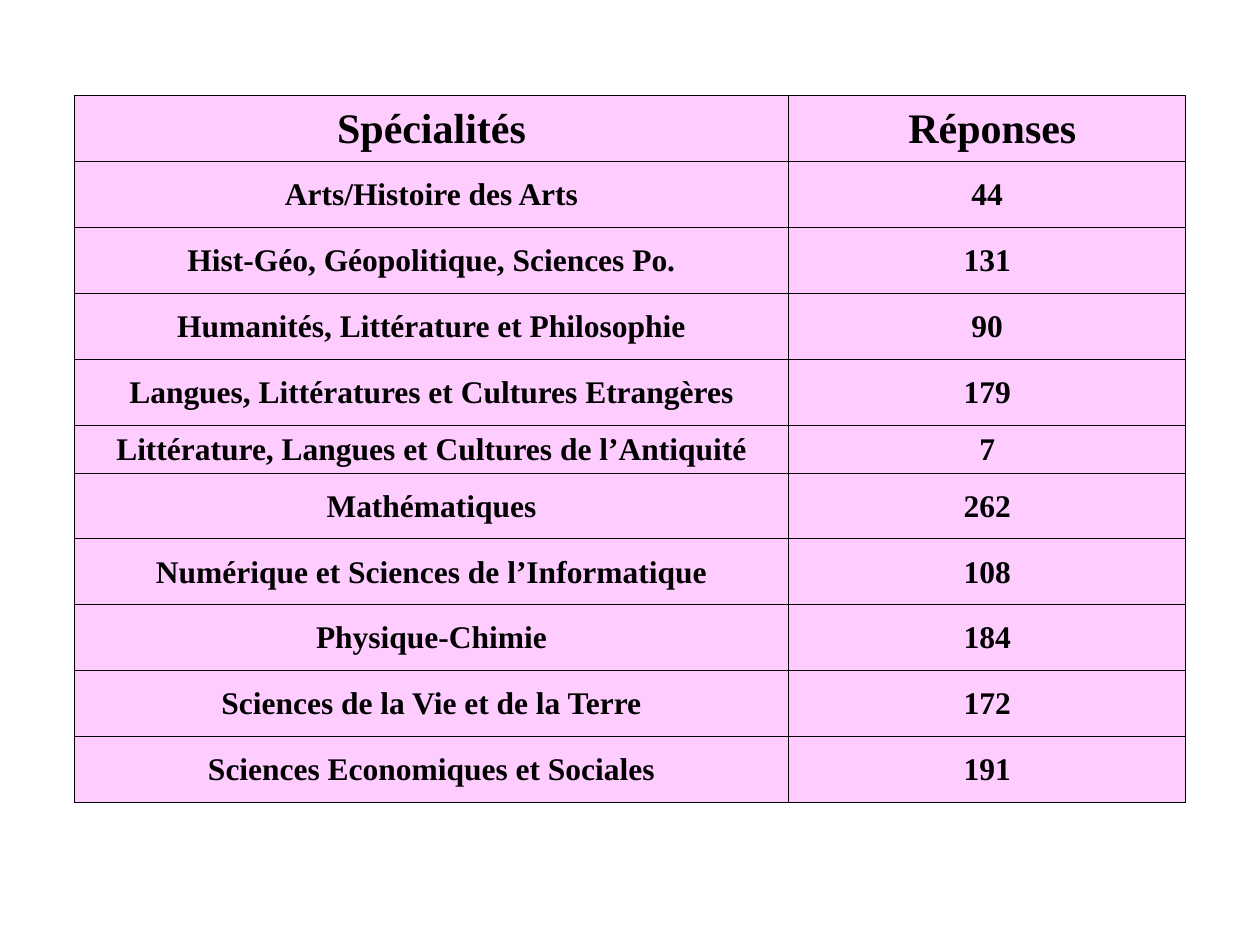
from lxml.etree import SubElement
from pptx import Presentation
from pptx.dml.color import RGBColor
from pptx.enum.text import MSO_ANCHOR, PP_ALIGN
from pptx.oxml.ns import qn
from pptx.util import Inches, Pt

PINK = RGBColor(0xFF, 0xCC, 0xFF)
BLACK = RGBColor(0, 0, 0)

HEADER = ("Spécialités", " Réponses")
ANSWERS = [
    ("Arts/Histoire des Arts", 44),
    ("Hist-Géo, Géopolitique, Sciences Po.", 131),
    ("Humanités, Littérature et Philosophie", 90),
    ("Langues, Littératures et Cultures Etrangères", 179),
    ("Littérature, Langues et Cultures de l’Antiquité", 7),
    ("Mathématiques", 262),
    ("Numérique et Sciences de l’Informatique", 108),
    ("Physique-Chimie", 184),
    ("Sciences de la Vie et de la Terre", 172),
    ("Sciences Economiques et Sociales", 191),
]
ROWS = [HEADER] + ANSWERS

# Table grid: one short row, the others share the remaining height
LEFT, TOP, HEIGHT = Inches(0.59), Inches(0.76), Inches(5.61)
COLUMN_WIDTHS = (Inches(5.67), Inches(3.15))
SHORT_ROW, SHORT_HEIGHT = 5, Inches(0.38)
ROW_HEIGHT = (HEIGHT - SHORT_HEIGHT) // (len(ROWS) - 1)


def write_text(cell, text, size=18, bold=True, color=BLACK, font="Times New Roman"):
    para = cell.text_frame.paragraphs[0]
    para.alignment = PP_ALIGN.CENTER
    span = para.add_run()
    span.text = text
    span.font.name = font
    span.font.size = Pt(size)
    span.font.bold = bold
    span.font.color.rgb = color


def add_borders(cell, width=0.5, color=BLACK):
    properties = cell._tc.get_or_add_tcPr()
    for side in ("lnL", "lnR", "lnT", "lnB"):
        line = SubElement(properties, qn(f"a:{side}"), w=str(Pt(width)))
        fill = SubElement(line, qn("a:solidFill"))
        SubElement(fill, qn("a:srgbClr"), val=str(color))


# Page
deck = Presentation()
deck.slide_width, deck.slide_height = Inches(10), Inches(7.5)
page = deck.slides.add_slide(deck.slide_layouts[6])

# Table of answers by subject
table = page.shapes.add_table(
    len(ROWS), len(HEADER), LEFT, TOP, sum(COLUMN_WIDTHS), HEIGHT
).table
table.first_row = table.horz_banding = False
for column, width in zip(table.columns, COLUMN_WIDTHS):
    column.width = width

for row_index, values in enumerate(ROWS):
    table.rows[row_index].height = SHORT_HEIGHT if row_index == SHORT_ROW else ROW_HEIGHT
    for column_index, value in enumerate(values):
        cell = table.cell(row_index, column_index)
        cell.margin_left = cell.margin_right = cell.margin_top = Inches(0.01)
        cell.margin_bottom = 0
        cell.vertical_anchor = MSO_ANCHOR.MIDDLE
        # Borders come before the fill in the cell's properties
        add_borders(cell)
        cell.fill.solid()
        cell.fill.fore_color.rgb = PINK
        write_text(cell, str(value), size=24 if row_index == 0 else 18)

deck.save("out.pptx")
